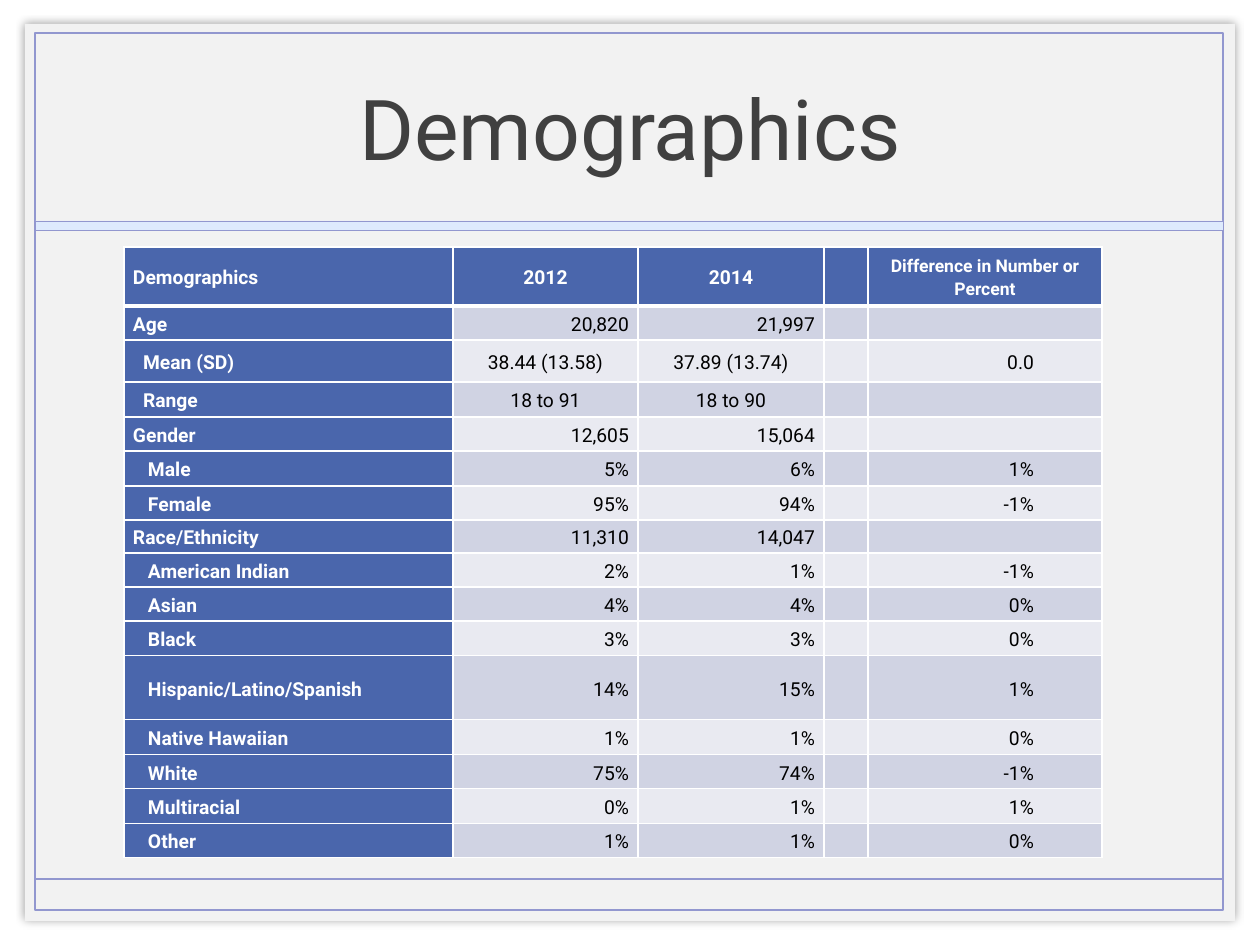
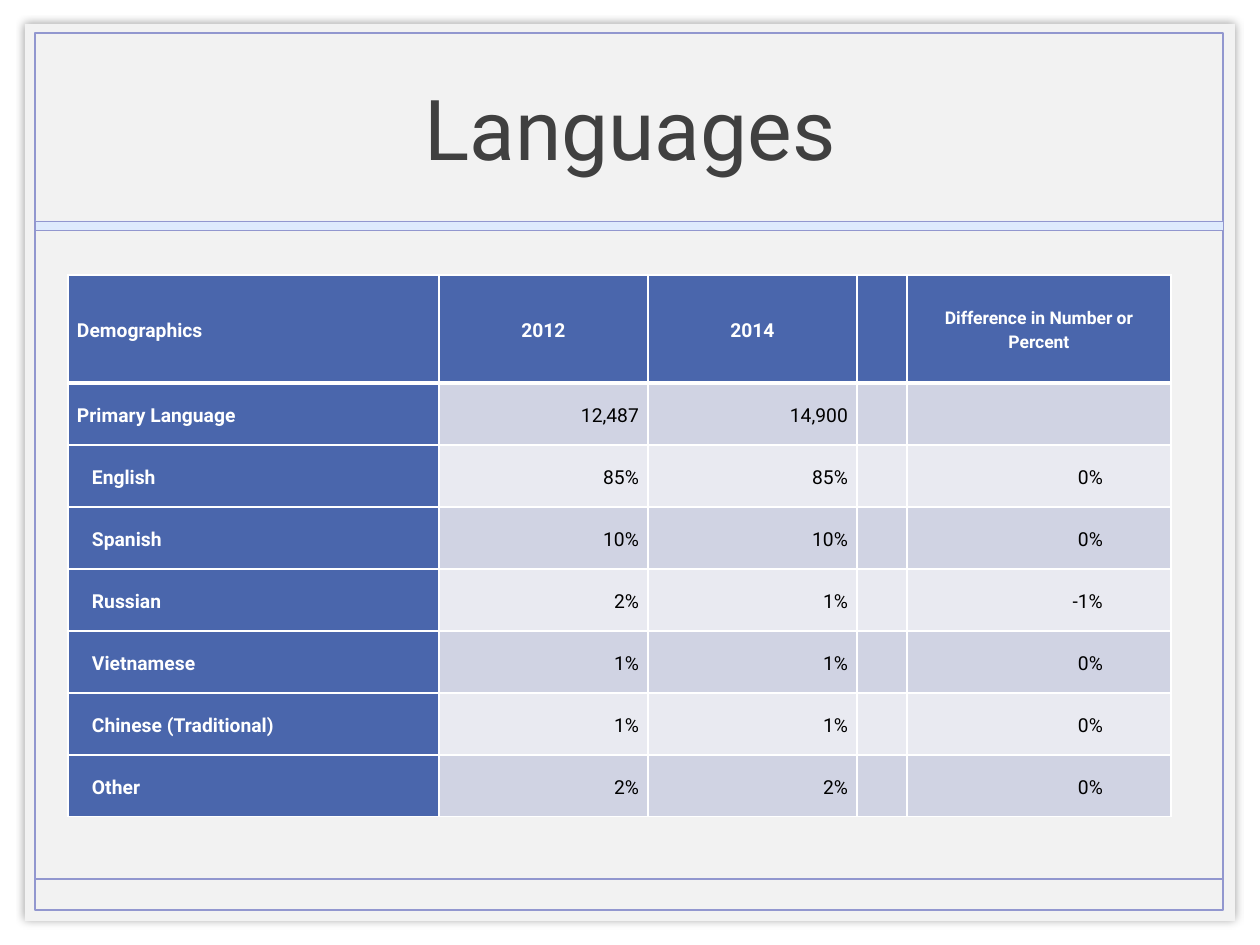
from lxml import etree
from pptx import Presentation
from pptx import util as u
from pptx.dml.color import RGBColor
from pptx.enum import shapes, text
from pptx.oxml.ns import qn

# Content: each row is (indent steps, label, 2012, 2014, difference)
HEAD = (0, "Demographics", "2012", "2014", "Difference in Number or Percent")
PAGES = [
    {
        "title": "Demographics",
        "at": (124, 247),
        "cols": [329, 185, 186, 44, 234],
        "heights": [59, 34, 42, 35, 34, 35, 34, 33, 34, 34, 35, 64, 35, 34, 35, 34],
        "rows": [
            (0, "Age", "20,820", "21,997", ""),
            (2, "Mean (SD)", "38.44 (13.58)", "37.89 (13.74)", "0.0"),
            (2, "Range", "18 to 91", "18 to 90", ""),
            (0, "Gender", "12,605", "15,064", ""),
            (3, "Male", "5%", "6%", "1%"),
            (3, "Female", "95%", "94%", "-1%"),
            (0, "Race/Ethnicity", "11,310", "14,047", ""),
            (3, "American Indian", "2%", "1%", "-1%"),
            (3, "Asian", "4%", "4%", "0%"),
            (3, "Black", "3%", "3%", "0%"),
            (3, "Hispanic/Latino/Spanish", "14%", "15%", "1%"),
            (3, "Native Hawaiian", "1%", "1%", "0%"),
            (3, "White", "75%", "74%", "-1%"),
            (3, "Multiracial", "0%", "1%", "1%"),
            (3, "Other", "1%", "1%", "0%"),
        ],
    },
    {
        "title": "Languages",
        "at": (68, 275),
        "cols": [371, 209, 209, 50, 264],
        "heights": [108] + [62] * 7,
        "rows": [
            (0, "Primary Language", "12,487", "14,900", ""),
            (3, "English", "85%", "85%", "0%"),
            (3, "Spanish", "10%", "10%", "0%"),
            (3, "Russian", "2%", "1%", "-1%"),
            (3, "Vietnamese", "1%", "1%", "0%"),
            (3, "Chinese (Traditional)", "1%", "1%", "0%"),
            (3, "Other", "2%", "2%", "0%"),
        ],
    },
]

# Shared look
FONT = "Roboto"
WHITE, BLACK, GREY, PAPER = "FFFFFF", "000000", "404040", "F2F2F2"
EDGE, BAND, BLUE = "9297CF", "DEEAFD", "4A66AC"
STRIPES = ["E9EAF1", "D0D3E3"]
PAD, STEP, DIFF_PAD = 9, 5, 68
LEFT, CENTER, RIGHT = text.PP_ALIGN.LEFT, text.PP_ALIGN.CENTER, text.PP_ALIGN.RIGHT


def px(n):
    return u.Emu(round(n * 914400 / 126))


def rgb(code):
    return RGBColor.from_string(code)


def child(node, tag, **attrs):
    return etree.SubElement(node, qn(tag), {k: str(v) for k, v in attrs.items()})


def add_run(para, words, size, color, bold=False):
    run = para.add_run()
    run.text = words
    font = run.font
    font.name, font.size, font.bold = FONT, u.Pt(size), bold
    font.color.rgb = rgb(color)


def add_box(slide, at, fill=None, line=None, width=1):
    box = slide.shapes.add_shape(shapes.MSO_SHAPE.RECTANGLE, *map(px, at))
    box.shadow.inherit = False
    if fill:
        box.fill.solid()
        box.fill.fore_color.rgb = rgb(fill)
    else:
        box.fill.background()
    if line:
        box.line.color.rgb = rgb(line)
        box.line.width = u.Pt(width)
    else:
        box.line.fill.background()
    return box


def add_frame(slide):
    # Paper sheet with a soft shadow
    sheet = add_box(slide, (25, 24, 1210, 897), PAPER)
    effects = sheet._element.spPr.find(qn("a:effectLst"))
    glow = child(effects, "a:outerShdw", blurRad=u.Pt(5), dist=0, dir=0, rotWithShape=0)
    child(child(glow, "a:srgbClr", val=BLACK), "a:alpha", val=40000)

    # Border, footer rule and title band
    add_box(slide, (35, 33, 1188, 877), line=EDGE)
    rule = slide.shapes.add_connector(
        shapes.MSO_CONNECTOR.STRAIGHT, *map(px, (35, 879, 1223, 879)))
    rule.line.color.rgb = rgb(EDGE)
    rule.line.width = u.Pt(1)
    child(rule._element.spPr, "a:effectLst")
    add_box(slide, (35, 221, 1188, 9), BAND, EDGE, 0.25)


def add_title(slide, words):
    frame = slide.shapes.add_textbox(*map(px, (124, 34, 1012, 185))).text_frame
    frame.word_wrap = True
    frame.vertical_anchor = text.MSO_ANCHOR.MIDDLE
    para = frame.paragraphs[0]
    para.alignment = CENTER
    add_run(para, words, 48, GREY)


def set_edges(cell, row):
    props = cell._tc.get_or_add_tcPr()
    top, low = (3 if row == 1 else 1), (3 if row == 0 else 1)
    for side, width in zip("LRTB", (1, 1, top, low)):
        line = child(props, "a:ln" + side, w=u.Pt(width))
        child(child(line, "a:solidFill"), "a:srgbClr", val=WHITE)


def fill_cell(cell, row, col, words, depth):
    head, label, diff = row == 0, col == 0, col == 4
    set_edges(cell, row)
    cell.fill.solid()
    cell.fill.fore_color.rgb = rgb(BLUE if head or label else STRIPES[row % 2])
    cell.vertical_anchor = text.MSO_ANCHOR.MIDDLE
    cell.margin_top = cell.margin_bottom = 0
    cell.margin_left = px(PAD + STEP * depth if label else PAD)
    cell.margin_right = px(DIFF_PAD if diff and not head else PAD)

    para = cell.text_frame.paragraphs[0]
    para.line_spacing = 1.15
    if label:
        para.alignment = LEFT
    else:
        # Headings and multi-part values are centred, plain numbers go right
        para.alignment = CENTER if head or " " in words else RIGHT
    if words:
        strong = head or label
        add_run(para, words, 10 if head and diff else 11,
                WHITE if strong else BLACK, strong)
    else:
        para._p.get_or_add_endParaRPr().set("sz", "1100")


def add_grid(slide, page):
    cols, heights = page["cols"], page["heights"]
    size = (sum(cols), sum(heights))
    table = slide.shapes.add_table(
        len(heights), len(cols), *map(px, page["at"] + size)).table
    table.horz_banding = False
    for part, width in zip(table.columns, cols):
        part.width = px(width)
    for part, height in zip(table.rows, heights):
        part.height = px(height)
    for row, (depth, label, old, new, diff) in enumerate([HEAD] + page["rows"]):
        for col, words in enumerate((label, old, new, "", diff)):
            fill_cell(table.cell(row, col), row, col, words, depth)


def main():
    deck = Presentation()
    deck.slide_width, deck.slide_height = px(1260), px(945)
    for page in PAGES:
        slide = deck.slides.add_slide(deck.slide_layouts[6])
        add_frame(slide)
        add_title(slide, page["title"])
        add_grid(slide, page)
    deck.save("out.pptx")


if __name__ == "__main__":
    main()
